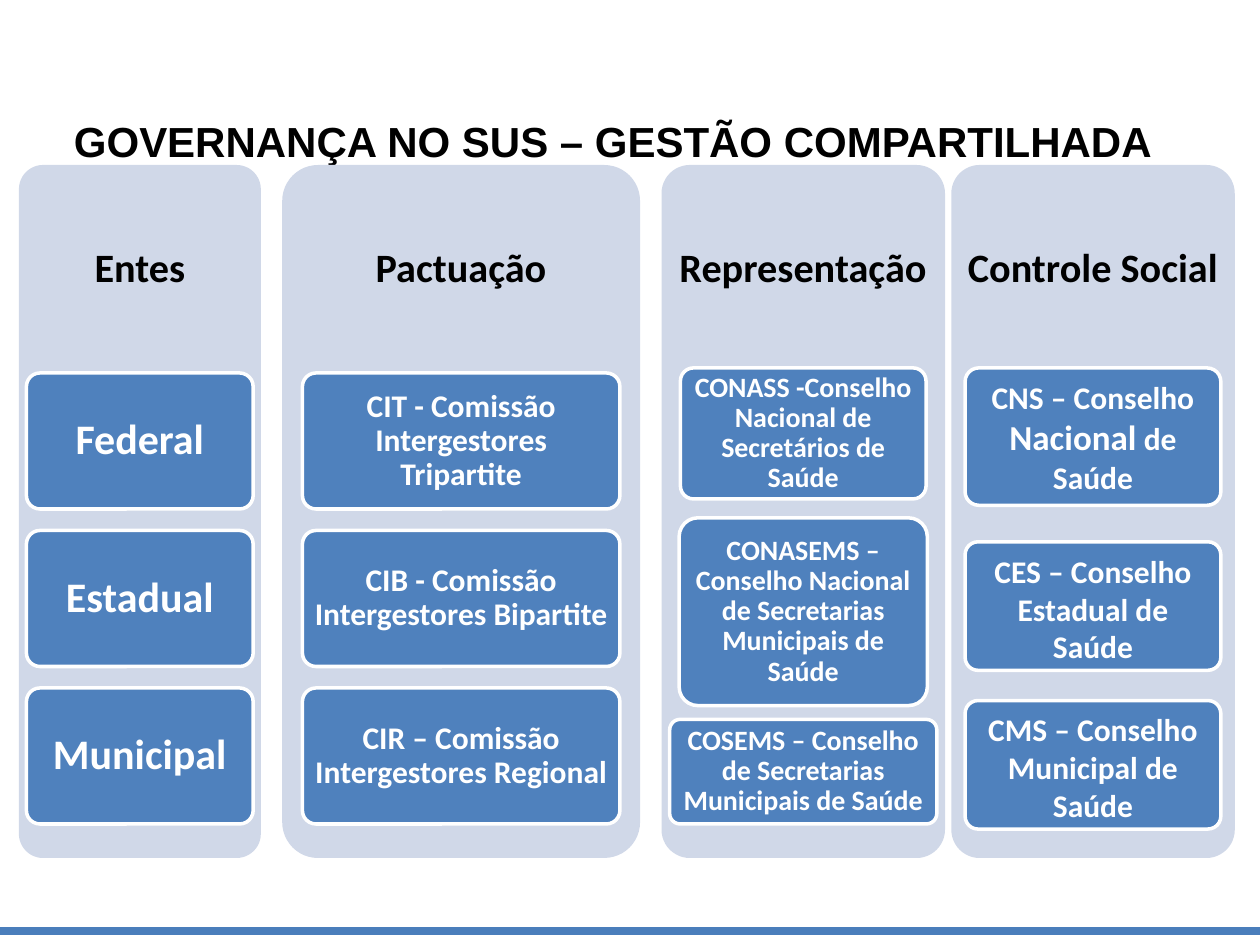
"""Build the slide on shared governance in SUS."""
from pptx import Presentation
from pptx.dml.color import RGBColor
from pptx.enum.shapes import MSO_CONNECTOR, MSO_SHAPE
from pptx.enum.text import MSO_ANCHOR, PP_ALIGN
from pptx.oxml.ns import qn
from pptx.util import Inches, Pt
from lxml.etree import SubElement

BLUE = RGBColor(0x4F, 0x81, 0xBD)
PALE = RGBColor(0xD0, 0xD8, 0xE8)
RULE = RGBColor(0x4A, 0x7E, 0xBB)
WHITE = RGBColor(255, 255, 255)
BLACK = RGBColor(0, 0, 0)

deck = Presentation()
deck.slide_width, deck.slide_height = Inches(10), Inches(7.5)
slide = deck.slides.add_slide(deck.slide_layouts[5])
shapes = slide.shapes


def panel(left, top, width, height, fill):
    box = shapes.add_shape(MSO_SHAPE.ROUNDED_RECTANGLE, Inches(left), Inches(top),
                           Inches(width), Inches(height))
    box.adjustments[0] = 0.1
    box.shadow.inherit = False
    box.fill.solid()
    box.fill.fore_color.rgb = fill
    box.line.fill.background()
    return box


def write(box, parts, size, color, pad, anchor=MSO_ANCHOR.MIDDLE, face="Calibri", gap=0.9):
    frame = box.text_frame
    frame.word_wrap = True
    frame.vertical_anchor = anchor
    frame.margin_left = frame.margin_right = Inches(pad[0])
    frame.margin_top = frame.margin_bottom = Inches(pad[1])
    para = frame.paragraphs[0]
    para.alignment = PP_ALIGN.CENTER
    para.line_spacing = gap
    font = para.font
    font.name, font.size, font.bold = face, Pt(size), True
    font.color.rgb = color
    for text, big in parts:
        run = para.add_run()
        run.text = text
        if big:
            run.font.size = Pt(big)


rule = shapes.add_connector(MSO_CONNECTOR.STRAIGHT, 0, Inches(7.39), Inches(10), Inches(7.39))
rule.line.color.rgb = RULE
rule.line.width = Pt(5)
SubElement(rule._element.spPr, qn("a:effectLst"))

title = shapes.title
title.left, title.top, title.width, title.height = 0, Inches(0.84), Inches(9.73), Inches(0.55)
write(title, [("GOVERNANÇA NO SUS – GESTÃO COMPARTILHADA", None)], 24, BLACK,
      (0.1, 0.05), face="Arial", gap=1.0)

even = [(2.96 + 1.25 * row, 1.08) for row in range(3)]
mid, high = MSO_ANCHOR.MIDDLE, MSO_ANCHOR.TOP
columns = [
    ("Entes", 0.15, 1.92, 24, (0.07, 0.05), mid, 0.9, [1.8] * 3, even,
     ["Federal", "Estadual", "Municipal"]),
    ("Pactuação", 2.24, 2.84, 18, (0.05, 0.04), mid, 0.9, [2.52] * 3, even,
     ["CIT - Comissão Intergestores Tripartite",
      "CIB - Comissão Intergestores Bipartite",
      "CIR – Comissão Intergestores Regional"]),
    ("Representação", 5.25, 2.25, 16, (0.04, 0.03), mid, 0.9, [1.95, 1.97, 2.12],
     [(2.92, 1.04), (4.11, 1.49), (5.71, 0.83)],
     ["CONASS -Conselho Nacional de Secretários de Saúde",
      "CONASEMS – Conselho Nacional de Secretarias Municipais de Saúde",
      "COSEMS – Conselho de Secretarias Municipais de Saúde"]),
    ("Controle Social", 7.55, 2.25, 18, (0.1, 0.05), high, 1.0, [2.03] * 3,
     [(2.92, 1.09), (4.3, 1.02), (5.56, 1.02)],
     [[("CNS – Conselho ", None), ("Nacional", 20), (" de Saúde", None)],
      "CES – Conselho Estadual de Saúde",
      "CMS – Conselho Municipal de Saúde"]),
]

for name, left, width, size, pad, anchor, gap, widths, rows, texts in columns:
    panel(left, 1.31, width, 5.5, PALE)
    head = shapes.add_textbox(Inches(left), Inches(1.31), Inches(width), Inches(1.65))
    write(head, [(name, None)], 23, BLACK, (0.1, 0.1))
    for wide, (top, tall), text in zip(widths, rows, texts):
        card = panel(left + (width - wide) / 2, top, wide, tall, BLUE)
        card.line.color.rgb = WHITE
        card.line.width = Pt(2)
        parts = [(text, None)] if isinstance(text, str) else text
        write(card, parts, size, WHITE, pad, anchor, gap=gap)

deck.save("out.pptx")
